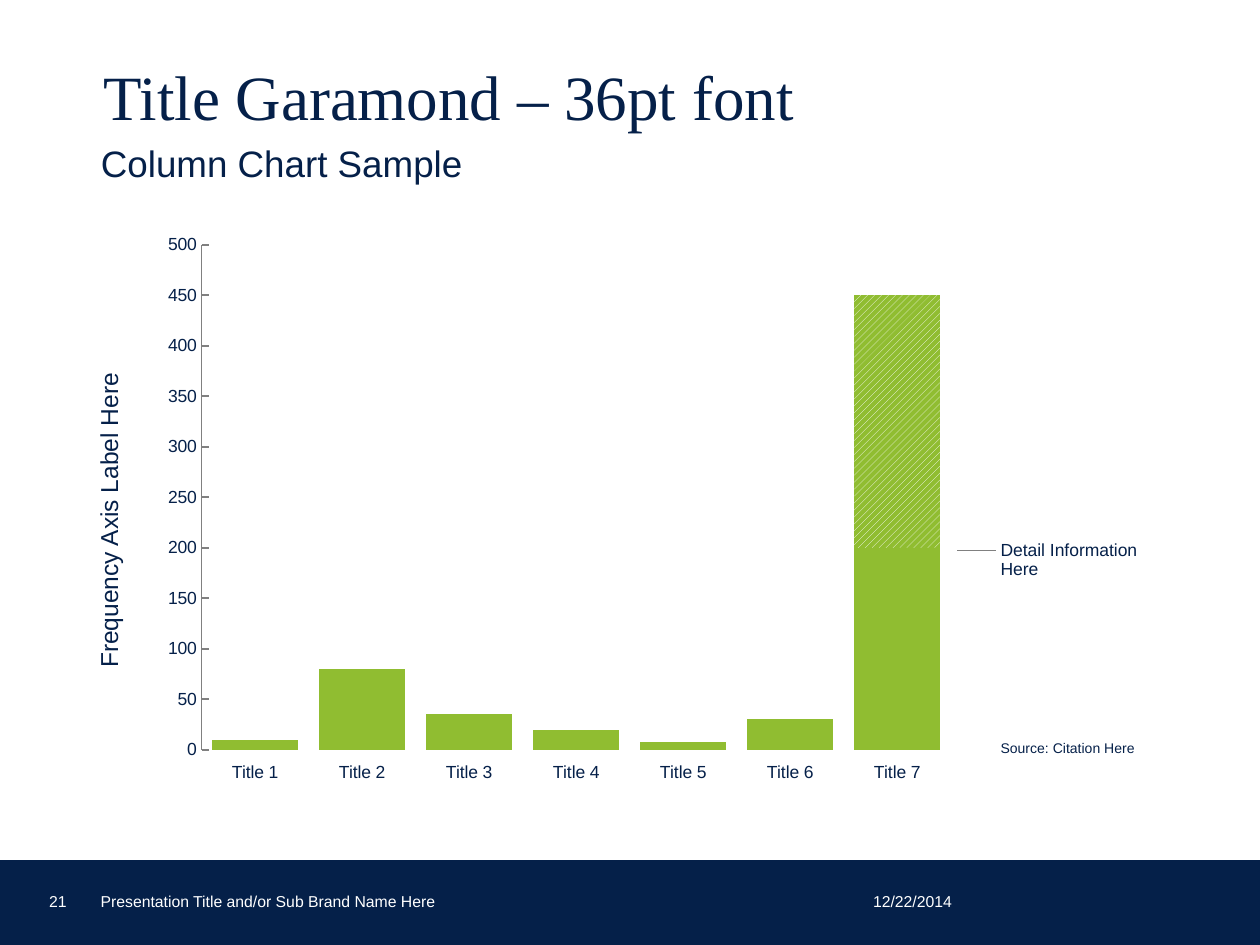
from dataclasses import dataclass

import pptx
import pptx.chart.data
import pptx.dml.color
import pptx.enum.chart
import pptx.enum.dml
import pptx.enum.shapes
import pptx.enum.text
import pptx.oxml
import pptx.oxml.ns
import pptx.util

Cm, Pt = pptx.util.Cm, pptx.util.Pt
ANCHOR = pptx.enum.text.MSO_ANCHOR
ALIGN = pptx.enum.text.PP_ALIGN
TICK = pptx.enum.chart.XL_TICK_MARK

NAVY, GREEN, BLUE, GREY, WHITE = "052049", "90BD31", "178CCB", "808080", "FFFFFF"
SANS, SERIF = "Arial", "Times New Roman"


@dataclass
class Label:
    text: str
    box: tuple  # left, top, width, height in cm
    size: float
    color: str = NAVY
    spacing: float = 0.9
    anchor: ANCHOR = ANCHOR.TOP
    align: ALIGN = ALIGN.LEFT
    rotation: float = 0


def footer(text: str, box: tuple) -> Label:
    return Label(text, box, 9, WHITE, 1.0, ANCHOR.BOTTOM)


LABELS = [
    footer("12/22/2014", (17.6, 17.93, 2.57, 0.43)),
    footer("Presentation Title and/or Sub Brand Name Here", (2.03, 17.98, 11.96, 0.38)),
    footer("21", (0.99, 17.93, 0.69, 0.43)),
    Label("Frequency Axis Label Here", (-2.39, 10.21, 9.25, 0.56), 14,
          align=ALIGN.CENTER, rotation=270),
    Label("Source: Citation Here", (20.17, 14.94, 4.22, 0.3), 8),
    Label("Detail Information\nHere", (20.17, 10.92, 4.22, 0.79), 10),
]


def rgb(color: str) -> pptx.dml.color.RGBColor:
    return pptx.dml.color.RGBColor.from_string(color)


def set_font(font, size: float, name: str = SANS, color: str = NAVY) -> None:
    font.size, font.name = Pt(size), name
    font.color.rgb = rgb(color)


def fill_text(tf, text: str, size: float, name: str, color: str, spacing: float):
    p = tf.paragraphs[0]
    p.line_spacing = spacing
    for i, line in enumerate(text.split("\n")):
        if i:
            p.add_line_break()
        r = p.add_run()
        r.text = line
        set_font(r.font, size, name, color)
    return p


def fill_placeholder(sp, box: tuple, text: str, size: float, name: str,
                     spacing: float, anchor: ANCHOR):
    sp.left, sp.top, sp.width, sp.height = map(Cm, box)
    tf = sp.text_frame
    tf.auto_size = pptx.enum.text.MSO_AUTO_SIZE.NONE
    tf.vertical_anchor = anchor
    p = fill_text(tf, text, size, name, NAVY, spacing)
    p.alignment = ALIGN.LEFT
    return p


def add_label(slide, label: Label) -> None:
    sp = slide.shapes.add_textbox(*map(Cm, label.box))
    sp.rotation = label.rotation
    tf = sp.text_frame
    tf.word_wrap = True
    tf.margin_left = tf.margin_right = tf.margin_top = tf.margin_bottom = 0
    tf.vertical_anchor = label.anchor
    p = fill_text(tf, label.text, label.size, SANS, label.color, label.spacing)
    p.alignment = label.align


def add_column_chart(slide) -> None:
    data = pptx.chart.data.CategoryChartData()
    data.categories = [f"Title {n}" for n in range(1, 8)]
    data.add_series("Series 1", (10, 80, 35, 20, 8, 30, 200))
    data.add_series("Series 2", (None,) * 6 + (250,))
    chart = slide.shapes.add_chart(
        pptx.enum.chart.XL_CHART_TYPE.COLUMN_STACKED,
        Cm(2.84), Cm(4.55), Cm(18.26), Cm(11.28), data).chart
    chart.has_legend = chart.has_title = False
    set_font(chart.font, 18, SERIF)

    # Columns, the top of the last one hatched
    plot = chart.plots[0]
    plot.gap_width, plot.overlap = 25, 100
    plot.vary_by_categories = False
    for series, color in zip(plot.series, (GREEN, BLUE)):
        series.format.fill.solid()
        series.format.fill.fore_color.rgb = rgb(color)
    fill = plot.series[1].points[6].format.fill
    fill.patterned()
    fill.pattern = pptx.enum.dml.MSO_PATTERN.WIDE_UPWARD_DIAGONAL
    fill.fore_color.rgb, fill.back_color.rgb = rgb(WHITE), rgb(GREEN)

    # Axes
    cat, val = chart.category_axis, chart.value_axis
    for axis, tick in ((cat, TICK.OUTSIDE), (val, TICK.INSIDE)):
        axis.major_tick_mark, axis.minor_tick_mark = tick, TICK.NONE
        axis.has_major_gridlines = False
        set_font(axis.tick_labels.font, 10)
    cat.format.line.fill.background()
    val.format.line.color.rgb = rgb(GREY)
    val.format.line.width = Pt(1)
    val.minimum_scale, val.maximum_scale, val.major_unit = 0, 500, 50

    # Fixed inner plot area
    area = chart._chartSpace.chart.plotArea
    for old in area.findall(pptx.oxml.ns.qn("c:layout")):
        area.remove(old)
    parts = "".join(f'<c:{tag} val="{value}"/>' for tag, value in (
        ("layoutTarget", "inner"), ("xMode", "edge"), ("yMode", "edge"),
        ("x", 0.067), ("y", 0.034), ("w", 0.827), ("h", 0.903)))
    area.insert(0, pptx.oxml.parse_xml(
        f'<c:layout {pptx.oxml.ns.nsdecls("c")}>'
        f'<c:manualLayout>{parts}</c:manualLayout></c:layout>'))


def main() -> None:
    prs = pptx.Presentation()
    prs.slide_width, prs.slide_height = Cm(25.4), Cm(19.05)
    s = prs.slides.add_slide(prs.slide_layouts[1])

    # Footer band
    band = s.shapes.add_shape(pptx.enum.shapes.MSO_SHAPE.RECTANGLE,
                              0, Cm(17.37), prs.slide_width, Cm(1.68))
    band.shadow.inherit = False
    band.fill.solid()
    band.fill.fore_color.rgb = band.line.color.rgb = rgb(NAVY)
    band.line.width = Pt(1.5)

    # Title and subtitle
    fill_placeholder(s.shapes.title, (1.83, 1.22, 22.45, 1.6),
                     "Title Garamond – 36pt font", 36, SERIF, 0.85, ANCHOR.BOTTOM)
    p = fill_placeholder(s.placeholders[1], (1.78, 2.82, 22.43, 1.07),
                         "Column Chart Sample", 21, SANS, 0.9, ANCHOR.TOP)
    p.space_before = Pt(14)
    pPr = p._p.get_or_add_pPr()
    pPr.set("marL", str(Cm(0.46)))
    pPr.set("indent", str(Cm(-0.46)))
    pPr.append(pptx.oxml.parse_xml(f'<a:buNone {pptx.oxml.ns.nsdecls("a")}/>'))

    add_column_chart(s)

    # Leader line to the detail note
    leader = s.shapes.add_connector(pptx.enum.shapes.MSO_CONNECTOR.STRAIGHT,
                                    Cm(19.3), Cm(11.1), Cm(20.07), Cm(11.1))
    leader.line.color.rgb = rgb(GREY)
    leader.line.width = Pt(1)
    leader._element.spPr.append(
        pptx.oxml.parse_xml(f'<a:effectLst {pptx.oxml.ns.nsdecls("a")}/>'))

    for label in LABELS:
        add_label(s, label)

    prs.save("out.pptx")


if __name__ == "__main__":
    main()
